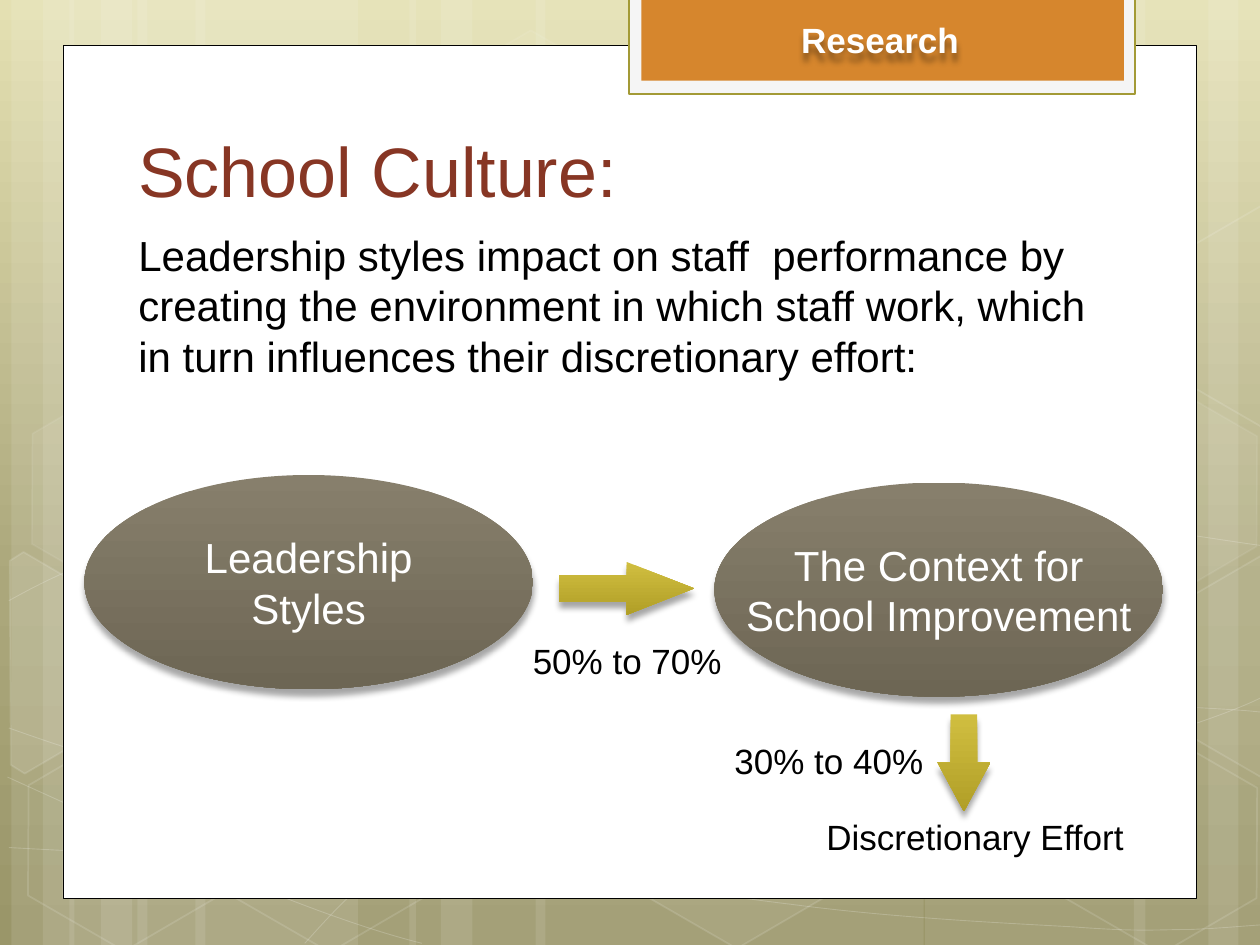
"""Build a slide on how leadership styles shape school culture and staff effort."""
from copy import deepcopy
from dataclasses import dataclass
from math import cos, radians, sin

from lxml.etree import SubElement
from pptx import Presentation
from pptx.dml.color import RGBColor
from pptx.enum.shapes import MSO_SHAPE
from pptx.enum.text import MSO_ANCHOR, PP_ALIGN
from pptx.oxml.ns import qn
from pptx.util import Inches, Pt


@dataclass(frozen=True)
class Theme:
    """Colours, font and type sizes."""
    font: str = "Arial"
    white: str = "FFFFFF"
    black: str = "000000"
    title: str = "873624"
    banner: str = "D6862D"
    banner_frame: str = "F5F5F5"
    banner_line: str = "A39A36"
    background: tuple = ((0, "E4E0B2"), (0.62, "ABA77B"), (1, "9A9669"))
    oval: tuple = ((0, "877F6C"), (1, "6D6654"))
    arrow: tuple = ((0, "D0BE40"), (1, "B19F27"))
    title_size: int = 40
    body_size: int = 24
    label_size: int = 20


THEME = Theme()

TITLE = ("School Culture:", (1, 1.03, 9, 0.71))
BODY = ("Leadership styles impact on staff  performance by creating the environment "
        "in which staff work, which in turn influences their discretionary effort:",
        (1, 1.77, 8.03, 1.31))
BANNER = ("Research", (5.18, 0.1, 3.61, 0.44))
OVALS = [(["Leadership", "Styles"], (0.67, 3.77)),
         (["The Context for", "School Improvement"], (5.67, 3.83))]
OVAL_SIZE = (3.56, 1.7)
ARROWS = [(MSO_SHAPE.RIGHT_ARROW, (4.44, 4.46, 1.07, 0.42), 1.278),
          (MSO_SHAPE.DOWN_ARROW, (7.44, 5.67, 0.42, 0.77), 0.925)]
LABELS = [("50% to 70%", (4.13, 5.03, 1.71, 0.43)),
          ("Discretionary Effort", (6.46, 6.42, 2.58, 0.44)),
          ("30% to 40%", (5.73, 5.82, 1.71, 0.43))]

STRIPS = [(1.09, 1.75), (0.09, 0.5), (0.34, 0.83), (1.55, 1.75), (0.55, 0.5), (0.8, 0.83),
          (7.34, 1.75), (9.59, 0.5), (9, 0.83), (4.25, 3.08), (3.25, 0.5), (3.5, 0.83)]
CURVES = [
    [(0.07, 6.73), (0.61, 6.76), (1.15, 6.79), (1.9, 6.78), (2.65, 6.77), (3.58, 6.75),
     (4.58, 6.65), (5.58, 6.55), (7, 6.36), (7.92, 6.17), (8.83, 5.98), (9.77, 5.68),
     (10.07, 5.51)],
    [(0.07, 4.77), (0.36, 4.61), (0.65, 4.46), (1.21, 4.31), (1.78, 4.16), (2.59, 3.94),
     (3.47, 3.87), (4.36, 3.8), (5.44, 3.79), (6.54, 3.87), (7.64, 3.95), (9.47, 4.26),
     (10.07, 4.34)],
    [(0.06, 6.17), (1.27, 6.72), (2.47, 7.27), (3.35, 7.49)],
    [(0.07, 5.78), (0.38, 5.89), (0.7, 6), (1.28, 6.16), (1.86, 6.31), (2.73, 6.56),
     (3.57, 6.73), (4.4, 6.9), (5.45, 7.08), (6.28, 7.18), (7.11, 7.29), (8, 7.33),
     (8.53, 7.36), (9.06, 7.4), (9.19, 7.38), (9.45, 7.38), (9.71, 7.37), (9.89, 7.35),
     (10.07, 7.34)],
    [(2.42, 7.49), (2.6, 7.29), (2.78, 7.09), (3.02, 6.91), (3.26, 6.72), (3.6, 6.53),
     (3.88, 6.39), (4.16, 6.25), (4.33, 6.19), (4.69, 6.09), (5.06, 5.99), (5.73, 5.85),
     (6.08, 5.78), (6.44, 5.71), (6.49, 5.71), (6.8, 5.69), (7.11, 5.66), (7.6, 5.63),
     (7.94, 5.62), (8.29, 5.61), (8.86, 5.62), (8.86, 5.62), (9.08, 5.62), (9.31, 5.62),
     (9.53, 5.62), (9.71, 5.63), (9.88, 5.64), (9.97, 5.65), (10.06, 5.66), (10.03, 5.65),
     (10.06, 5.66)],
]
TILT = 30
HEXAGONS = [(3.34, 0.36, 4, 8), (4.97, 5.89, 6, 12), (0.11, 5.91, 0, 12),
            (0.14, 3.12, 7, 8), (1.74, 5.92, 0, 12), (7.53, 4.53, 10, 12),
            (8.34, 5.93, 0, 12), (8.34, 3.14, 7, 8)]
CUT_HEXAGONS = [
    ((0.36, 5.36), [(0.08, 4.45), (0.19, 4.38), (0.96, 4.83), (0.95, 5.7), (0.2, 6.14),
                    (0.09, 6.07)], 10),
    ((9.85, 5.2), [(9.26, 4.85), (10.02, 4.41), (10.09, 4.46), (10.09, 6.13),
                   (10.02, 6.17), (9.26, 5.73)], 4),
    ((9.85, 2.41), [(9.26, 2.07), (10.02, 1.63), (10.1, 1.68), (10.09, 3.35),
                    (10.02, 3.39), (9.26, 2.95)], 0),
]


def paint(fill, owner, colour, opacity=100):
    if not opacity or colour is None:
        fill.background()
        return
    fill.solid()
    fill.fore_color.rgb = RGBColor.from_string(colour)
    if opacity < 100:
        solid = owner.find(qn("a:solidFill"))
        SubElement(solid[0], qn("a:alpha"), val=str(opacity * 1000))


def paint_gradient(fill, owner, stops):
    fill.gradient()
    fill.gradient_angle = 270
    stop_list = owner.xpath(".//a:gsLst")[0]
    while len(stop_list) < len(stops):
        stop_list.append(deepcopy(stop_list[-1]))
    for stop, (position, colour) in zip(fill.gradient_stops, stops):
        stop.position = position
        stop.color.rgb = RGBColor.from_string(colour)


def style(shape, colour=None, opacity=100, line=None, width=1, line_opacity=100):
    shape.shadow.inherit = False
    properties = shape.element.spPr
    paint(shape.fill, properties, colour, opacity)
    shape.line.width = Pt(width)
    paint(shape.line.fill, properties.find(qn("a:ln")), line, line_opacity)


def add_shadow(shape):
    shape.shadow.inherit = False
    effects = shape.element.spPr.find(qn("a:effectLst"))
    shadow = SubElement(effects, qn("a:outerShdw"), blurRad=str(Pt(3.5)), dist=str(Pt(4)),
                        dir="5400000", rotWithShape="0")
    colour = SubElement(shadow, qn("a:srgbClr"), val=THEME.black)
    SubElement(colour, qn("a:alpha"), val="34000")


def add_preset(slide, kind, box):
    return slide.shapes.add_shape(kind, *map(Inches, box))


def add_raised(slide, kind, box, stops):
    shape = add_preset(slide, kind, box)
    style(shape)
    paint_gradient(shape.fill, shape.element.spPr, stops)
    add_shadow(shape)
    return shape


def add_outline(slide, points, close):
    start, *others = [(x * 1000, y * 1000) for x, y in points]
    builder = slide.shapes.build_freeform(*start, scale=Inches(0.001))
    builder.add_line_segments(others, close=close)
    return builder.convert_to_shape()


def add_curve(slide, points):
    shape = add_outline(slide, points, False)
    outline = shape.element.xpath(".//a:path")[0]
    segments = outline.findall(qn("a:lnTo"))
    for index in range(0, len(segments), 3):
        bend = SubElement(outline, qn("a:cubicBezTo"))
        for segment in segments[index:index + 3]:
            bend.append(segment[0])
            outline.remove(segment)
    return shape


def turn_back(points, centre):
    cosine, sine = cos(radians(TILT)), sin(radians(TILT))
    offsets = [(x - centre[0], y - centre[1]) for x, y in points]
    return [(centre[0] + x * cosine + y * sine, centre[1] - x * sine + y * cosine)
            for x, y in offsets]


def write(frame, lines, size, colour, align=PP_ALIGN.LEFT, wrap=True):
    frame.word_wrap = wrap
    for index, line in enumerate(lines):
        paragraph = frame.add_paragraph() if index else frame.paragraphs[0]
        paragraph.text = line
        paragraph.alignment = align
        paragraph.font.name = THEME.font
        paragraph.font.size = Pt(size)
        paragraph.font.color.rgb = RGBColor.from_string(colour)


def add_text(slide, content, size, colour, align=PP_ALIGN.LEFT, wrap=True):
    text, box = content
    shape = slide.shapes.add_textbox(*map(Inches, box))
    write(shape.text_frame, [text], size, colour, align, wrap)
    return shape


def add_backdrop(slide):
    paint_gradient(slide.background.fill, slide.element, THEME.background)
    for left, width in STRIPS:
        style(add_preset(slide, MSO_SHAPE.RECTANGLE, (left, 0, width, 7.5)), THEME.white, 10)
    for curve in CURVES:
        style(add_curve(slide, curve), None, 0, THEME.white, 0.5, 20)
    for left, top, opacity, line_opacity in HEXAGONS:
        hexagon = add_preset(slide, MSO_SHAPE.HEXAGON, (left, top, 1.75, 1.52))
        hexagon.adjustments[0] = 0.285
        hexagon.rotation = TILT
        style(hexagon, THEME.white, opacity, THEME.white, 1, line_opacity)
    for centre, points, opacity in CUT_HEXAGONS:
        hexagon = add_outline(slide, turn_back(points, centre), True)
        hexagon.rotation = TILT
        style(hexagon, THEME.white, opacity, THEME.white, 1, 12)
    for box, colour, line, width in [
            ((0.5, 0.36, 9, 6.77), THEME.white, THEME.black, 0.5),
            ((4.99, -0.02, 4.02, 0.77), THEME.banner_frame, THEME.banner_line, 1.25),
            ((5.09, -0.04, 3.83, 0.68), THEME.banner, None, 1)]:
        style(add_preset(slide, MSO_SHAPE.RECTANGLE, box), colour, 100, line, width)


def main():
    presentation = Presentation()
    presentation.slide_width, presentation.slide_height = Inches(10), Inches(7.5)
    slide = presentation.slides.add_slide(presentation.slide_layouts[6])
    add_backdrop(slide)
    add_text(slide, BODY, THEME.body_size, THEME.black)
    for lines, corner in OVALS:
        oval = add_raised(slide, MSO_SHAPE.OVAL, corner + OVAL_SIZE, THEME.oval)
        oval.text_frame.vertical_anchor = MSO_ANCHOR.MIDDLE
        write(oval.text_frame, lines, THEME.body_size, THEME.white, PP_ALIGN.CENTER, False)
    for kind, box, head in ARROWS:
        add_raised(slide, kind, box, THEME.arrow).adjustments[1] = head
    for label in LABELS:
        add_text(slide, label, THEME.label_size, THEME.black, wrap=False)
    title = add_text(slide, TITLE, THEME.title_size, THEME.title).text_frame
    title.vertical_anchor = MSO_ANCHOR.BOTTOM
    title.paragraphs[0].line_spacing = 0.9
    banner = add_text(slide, BANNER, THEME.label_size, THEME.white, PP_ALIGN.CENTER)
    banner.text_frame.paragraphs[0].font.bold = True
    add_shadow(banner)
    presentation.save("out.pptx")


if __name__ == "__main__":
    main()
